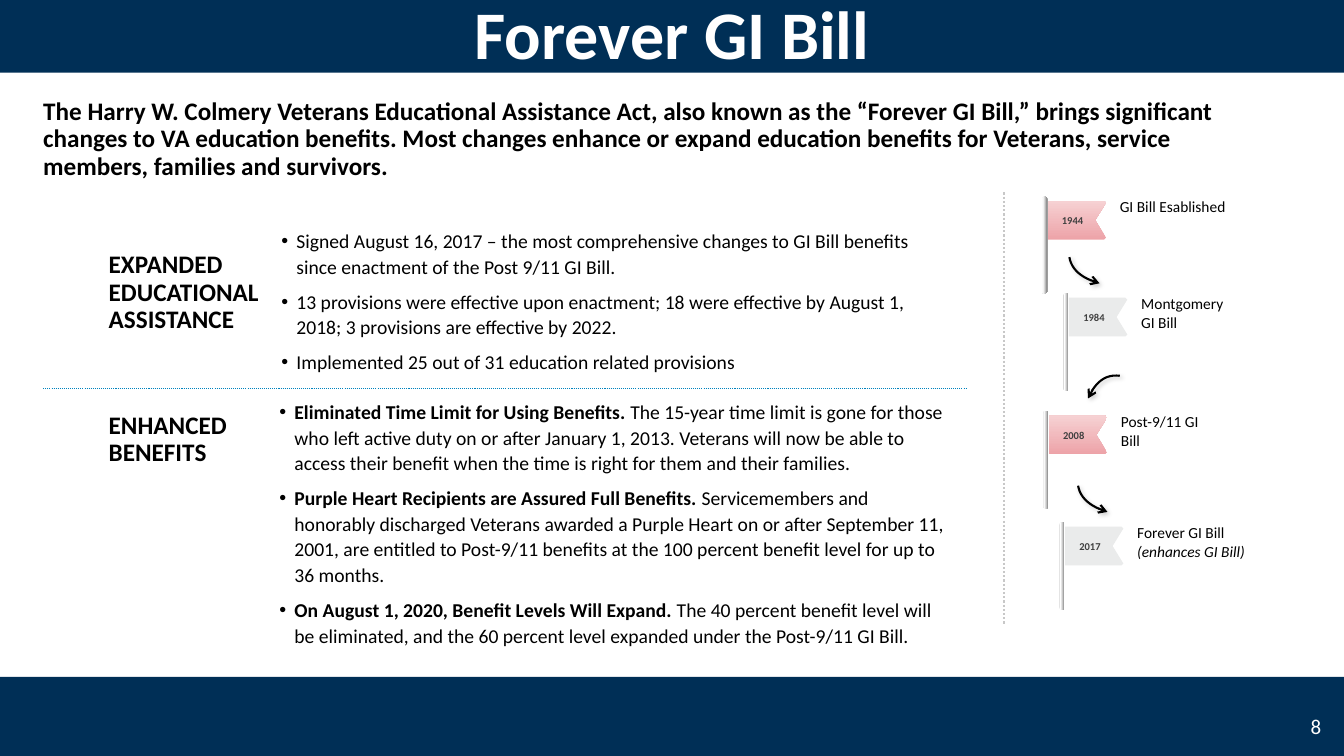
import lxml.etree
import pptx
import pptx.dml.color
import pptx.enum.dml
import pptx.enum.shapes
import pptx.enum.text
import pptx.oxml.ns
import pptx.util

Cm = pptx.util.Cm
Pt = pptx.util.Pt
RGB = pptx.dml.color.RGBColor
Align = pptx.enum.text.PP_ALIGN
Anchor = pptx.enum.text.MSO_ANCHOR
Shape = pptx.enum.shapes.MSO_SHAPE
qn = pptx.oxml.ns.qn

NAVY = RGB(0x00, 0x2F, 0x56)
WHITE = RGB(0xFF, 0xFF, 0xFF)
BLACK = RGB(0x00, 0x00, 0x00)
BLUE = RGB(0x00, 0x83, 0xBE)
SILVER = RGB(0xC8, 0xC8, 0xC8)
DARK = RGB(0x40, 0x40, 0x40)
PALE = RGB(0xEA, 0xEB, 0xEB)
ROSE = [(0, RGB(0xED, 0xA3, 0xA8)), (100, RGB(0xF6, 0xD1, 0xD3))]
STEEL = [(0, RGB(0xD7, 0xD7, 0xD7)), (10, WHITE), (20, WHITE),
         (60, SILVER), (85, RGB(0x96, 0x96, 0x96)), (100, RGB(0x7D, 0x7D, 0x7D))]

WIDE, HIGH = 33.87, 19.05
BAND = 2.03
INTRO = ("The Harry W. Colmery Veterans Educational Assistance Act, also known as the "
         "“Forever GI Bill,” brings significant changes to VA education benefits. Most changes "
         "enhance or expand education benefits for Veterans, service members, families and survivors.")
FACTS = [
    [("Signed August 16, 2017 – the most comprehensive changes to GI Bill benefits "
      "since enactment of the Post 9/11 GI Bill.", "")],
    [("13 provisions were effective upon enactment; 18 were effective by August 1, 2018; "
      "3 provisions are effective by 2022.", "")],
    [("Implemented 25 out of 31 education related provisions", "")],
]
GAINS = [
    [("Eliminated Time Limit for Using Benefits. ", "b"),
     ("The 15-year time limit is gone for those who left active duty on or after January 1, 2013. "
      "Veterans will now be able to access their benefit when the time is right for them and "
      "their families.", "")],
    [("Purple Heart Recipients are Assured Full Benefits. ", "b"),
     ("Servicemembers and honorably discharged Veterans awarded a Purple Heart on or after "
      "September 11, 2001, are entitled to Post-9/11 benefits at the 100 percent benefit level "
      "for up to 36 months.", "")],
    [("On August 1, 2020, Benefit Levels Will Expand. ", "b"),
     ("The 40 percent benefit level will be eliminated, and the 60 percent level expanded under "
      "the Post-9/11 GI Bill.", "")],
]
STEPS = [
    ("1944", [("GI Bill Esablished", "")], (26.26, 4.95, 3.43, 2.46), True),
    ("1984", [("Montgomery GI Bill", "")], (26.8, 7.39, 2.84, 2.46), False),
    ("2008", [("Post-9/11 GI Bill", "")], (26.29, 10.36, 2.84, 2.46), True),
    ("2017", [("Forever GI Bill ", ""), ("(enhances GI Bill)", "i")],
     (26.7, 13.16, 3.43, 2.21), False),
]
ARROWS = [((26.95, 6.48), (27.03, 6.95), (27.71, 7.14)),
          ((28.22, 9.47), (27.7, 9.4), (27.42, 10.04)),
          ((27.17, 12.24), (27.25, 12.7), (27.91, 12.9))]


def write(shape, paras, size, color=BLACK, align=Align.LEFT, anchor=Anchor.TOP,
          inset=(0, 0, 0, 0), line=1.0, before=0, after=0, bullet=False):
    frame = shape.text_frame
    frame.word_wrap = True
    frame.auto_size = pptx.enum.text.MSO_AUTO_SIZE.NONE
    frame.vertical_anchor = anchor
    sides = [Cm(side) for side in inset]
    frame.margin_left, frame.margin_top, frame.margin_right, frame.margin_bottom = sides
    for rank, runs in enumerate(paras):
        para = frame.add_paragraph() if rank else frame.paragraphs[0]
        if bullet:
            props = para._p.get_or_add_pPr()
            props.set("marL", str(Cm(0.38)))
            props.set("indent", str(Cm(-0.38)))
            lxml.etree.SubElement(props, qn("a:buFont"), typeface="Arial")
            lxml.etree.SubElement(props, qn("a:buChar"), char="•")
        para.alignment = align
        para.line_spacing = line
        para.space_before = Pt(before if rank else 0)
        para.space_after = Pt(after)
        for text, style in runs:
            run = para.add_run()
            run.text = text
            font = run.font
            font.name, font.size = "Calibri", Pt(size)
            font.bold, font.italic = "b" in style, "i" in style
            font.color.rgb = color


def place(shape, box):
    shape.left, shape.top, shape.width, shape.height = [Cm(side) for side in box]


def label(slide, box, paras, size, **style):
    write(slide.shapes.add_textbox(*[Cm(side) for side in box]), paras, size, **style)


def paint(shape, fill, angle=0):
    shape.shadow.inherit = False
    shape.line.fill.background()
    if not isinstance(fill, list):
        shape.fill.solid()
        shape.fill.fore_color.rgb = fill
        return
    shape.fill.gradient()
    shape.fill.gradient_angle = angle
    stops = shape.element.spPr.find(qn("a:gradFill")).find(qn("a:gsLst"))
    for stop in list(stops):
        stops.remove(stop)
    for part, color in fill:
        stop = lxml.etree.SubElement(stops, qn("a:gs"), pos=str(part * 1000))
        lxml.etree.SubElement(stop, qn("a:srgbClr"), val=str(color))


def band(slide, box):
    shape = slide.shapes.add_shape(Shape.RECTANGLE, *[Cm(side) for side in box])
    paint(shape, NAVY)
    shape.element.getparent().insert(2, shape.element)


def rule(slide, start, end, color, width):
    ends = [Cm(side) for side in start + end]
    line = slide.shapes.add_connector(pptx.enum.shapes.MSO_CONNECTOR.STRAIGHT, *ends)
    line.line.color.rgb = color
    line.line.width = Pt(width)
    line.line.dash_style = pptx.enum.dml.MSO_LINE.ROUND_DOT
    lxml.etree.SubElement(line.element.spPr, qn("a:effectLst"))


def trace(slide, points, close):
    spots = [(Cm(x), Cm(y)) for x, y in points]
    outline = slide.shapes.build_freeform(*spots[0])
    outline.add_line_segments(spots[1:], close=close)
    return outline.convert_to_shape()


def step(slide, box, year, name, red):
    left, top, width, height = box
    pole = slide.shapes.add_shape(Shape.ROUNDED_RECTANGLE, Cm(left), Cm(top), Cm(0.13), Cm(height))
    pole.adjustments[0] = 0.5
    paint(pole, STEEL)
    edge = [(0, 0), (1.42, 0), (1.47, 0.05), (1.2, 0.49), (1.47, 0.93), (1.42, 0.98), (0, 0.98)]
    flag = trace(slide, [(left + 0.14 + x, top + 0.11 + y) for x, y in edge], True)
    paint(flag, ROSE if red else PALE, 90)
    write(flag, [[(year, "b")]], 7.5, color=DARK, align=Align.CENTER,
          anchor=Anchor.MIDDLE, inset=(0.25, 0.13, 0.46, 0.13))
    label(slide, (left + 1.81, top - 0.12, width, 2.57), [name], 11,
          inset=(0.15, 0.15, 0.23, 0.15), after=6)


def arrow(slide, start, bend, end):
    points = []
    for tick in range(13):
        t = tick / 12
        points.append([(1 - t) ** 2 * a + 2 * t * (1 - t) * b + t * t * c
                       for a, b, c in zip(start, bend, end)])
    shape = trace(slide, points, False)
    shape.fill.background()
    shape.line.color.rgb = BLACK
    shape.line.width = Pt(1.5)
    lxml.etree.SubElement(shape.element.spPr.find(qn("a:ln")), qn("a:tailEnd"), type="arrow")
    shape.shadow.inherit = False
    glow = lxml.etree.SubElement(shape.element.spPr.find(qn("a:effectLst")), qn("a:outerShdw"),
                                 blurRad=str(Pt(3)), dist=str(Pt(2)), dir="2700000")
    tint = lxml.etree.SubElement(glow, qn("a:srgbClr"), val=str(BLACK))
    lxml.etree.SubElement(tint, qn("a:alpha"), val="20000")


def topic(head, body, box, name, drop, items):
    left, top, width, height = box
    place(head, (2.74, top + drop, 4.01, 2.08))
    write(head, [[(name, "b")]], 18, line=0.9)
    place(body, box)
    write(body, items, 14, line=1.1, before=6, bullet=True)


def main():
    deck = pptx.Presentation()
    deck.slide_width, deck.slide_height = Cm(WIDE), Cm(HIGH)
    slide = deck.slides.add_slide(deck.slide_layouts[4])
    holds = slide.placeholders
    pad = (0.3, 0.15, 0.3, 0.15)
    crown = (0, -0.2, WIDE, BAND)
    band(slide, crown)
    band(slide, (0, 17.06, WIDE, HIGH - 17.06))
    title = slide.shapes.title
    place(title, crown)
    write(title, [[("Forever GI Bill", "b")]], 48.6, color=WHITE,
          align=Align.CENTER, anchor=Anchor.MIDDLE, inset=pad)
    label(slide, (32.18, 17.78, 1.42, 1.02), [[("8", "")]], 15, color=WHITE,
          align=Align.RIGHT, anchor=Anchor.MIDDLE, inset=pad)
    label(slide, (1.09, 2.49, 30.35, 2.62), [[(INTRO, "b")]], 18, line=0.9)
    topic(holds[1], holds[2], (7.09, 5.72, 16.79, 3.9),
          "EXPANDED EDUCATIONAL ASSISTANCE", 0.63, FACTS)
    topic(holds[3], holds[4], (7.04, 10.01, 16.79, 6.6),
          "ENHANCED BENEFITS", 0.38, GAINS)
    rule(slide, (1.09, 9.78), (24.38, 9.78), BLUE, 0.75)
    rule(slide, (25.3, 4.85), (25.3, 15.75), SILVER, 1.5)
    for year, name, box, red in STEPS:
        step(slide, box, year, name, red)
    for curve in ARROWS:
        arrow(slide, *curve)
    deck.save("out.pptx")


if __name__ == "__main__":
    main()
